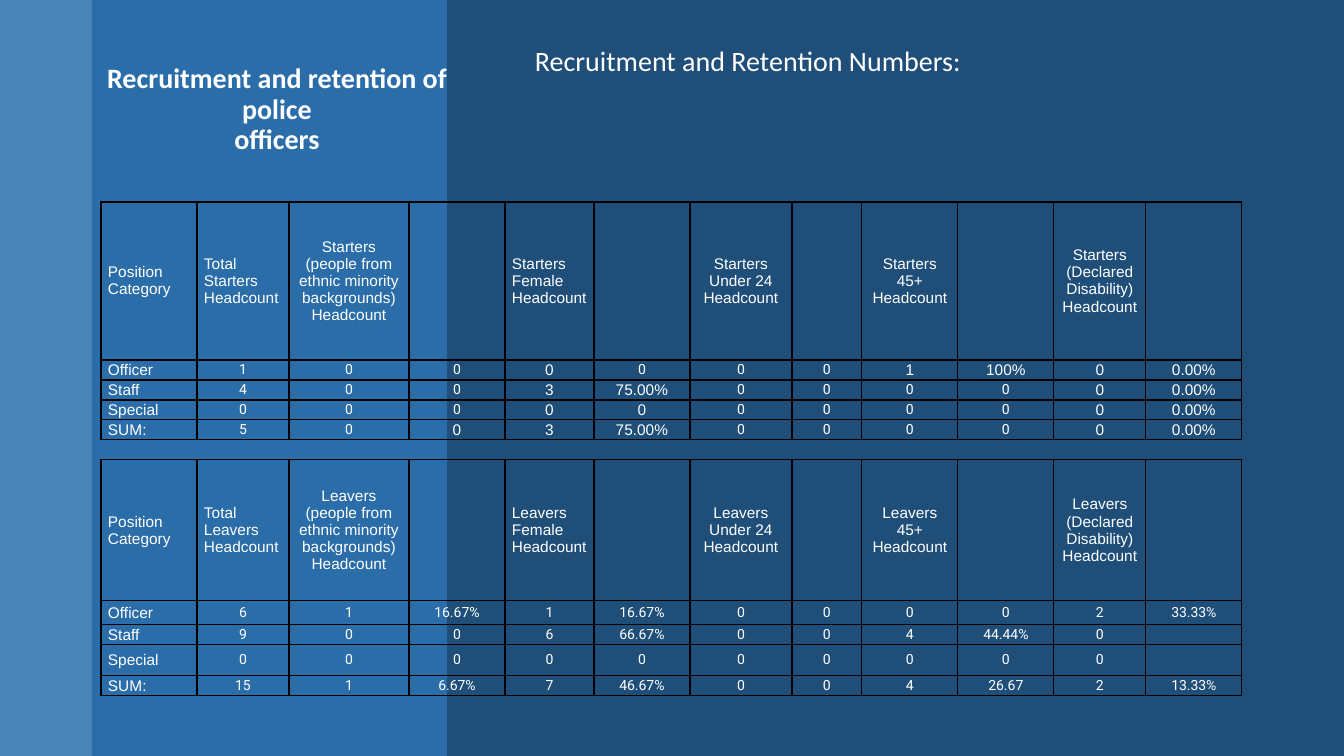
from lxml.etree import SubElement
from pptx import Presentation
from pptx.dml.color import RGBColor
from pptx.enum.shapes import MSO_SHAPE as SHAPE
from pptx.enum.text import MSO_ANCHOR as ANCHOR, PP_ALIGN as ALIGN
from pptx.oxml.ns import qn
from pptx.util import Emu, Pt

EMU_PER_PX = 914400 / 100.8
WHITE, BLACK = "FFFFFF", "000000"

COLUMNS = [96, 92, 120, 96, 89, 96, 102, 70, 96, 96, 92, 96]
HEADER_HEIGHTS = {"Starters": 158, "Leavers": 141}
SPACER_HEIGHT = 20
LEFT_HEADERS = (0, 1, 4)

# Each row: height, label and values, columns set in Arial
STARTERS = [
    (20, "Officer|1|0|0|0|0|0|0|1|100%|0|0.00%", (0, 4, 8, 9, 10, 11)),
    (20, "Staff|4|0|0|3|75.00%|0|0|0|0|0|0.00%", (0, 4, 5, 10, 11)),
    (20, "Special|0|0|0|0|0|0|0|0|0|0|0.00%", (0, 4, 5, 10, 11)),
    (20, "SUM:|5|0|0|3|75.00%|0|0|0|0|0|0.00%", (0, 3, 4, 5, 10, 11)),
]
LEAVERS = [
    (24, "Officer|6|1|16.67%|1|16.67%|0|0|0|0|2|33.33%", (0,)),
    (20, "Staff|9|0|0|6|66.67%|0|0|4|44.44%|0|", (0,)),
    (31, "Special|0|0|0|0|0|0|0|0|0|0|", (0,)),
    (20, "SUM:|15|1|6.67%|7|46.67%|0|0|4|26.67|2|13.33%", (0,)),
]


def px(n):
    return Emu(round(n * EMU_PER_PX))


def rgb(color):
    return RGBColor.from_string(color)


def set_font(p, name, size, bold=False):
    p.font.name, p.font.size, p.font.bold = name, Pt(size), bold
    p.font.color.rgb = rgb(WHITE)


def add_band(slide, x, y, w, h, color, opacity):
    sp = slide.shapes.add_shape(SHAPE.RECTANGLE, px(x), px(y), px(w), px(h))
    sp.shadow.inherit = False
    sp.line.fill.background()
    sp.fill.solid()
    sp.fill.fore_color.rgb = rgb(color)
    clr = sp.fill._xPr.find(".//" + qn("a:srgbClr"))
    SubElement(clr, qn("a:alpha"), val=str(opacity * 1000))


def add_heading(slide, x, y, w, h, text, align, anchor, bold):
    tf = slide.shapes.add_textbox(px(x), px(y), px(w), px(h)).text_frame
    tf.word_wrap = True
    tf.vertical_anchor = anchor
    p = tf.paragraphs[0]
    p.text = text
    p.alignment = align
    p.line_spacing = 0.9
    set_font(p, "Calibri", 20, bold)


def set_borders(cell, drawn="LRTB"):
    tcPr = cell._tc.get_or_add_tcPr()
    for side in "LRTB":
        ln = SubElement(tcPr, qn(f"a:ln{side}"), w="12700")
        if side in drawn:
            fill = SubElement(ln, qn("a:solidFill"))
            SubElement(fill, qn("a:srgbClr"), val=BLACK)
        else:
            SubElement(ln, qn("a:noFill"))


def fill_cell(cell, text, arial, align, borders="LRTB"):
    cell.margin_left = cell.margin_right = px(7)
    cell.margin_top = cell.margin_bottom = 0
    cell.vertical_anchor = ANCHOR.MIDDLE
    set_borders(cell, borders)
    cell.fill.background()
    p = cell.text_frame.paragraphs[0]
    p.alignment = align
    name, size = ("Arial", 11) if arial else ("Roboto", 10)
    if text:
        p.text = text
        set_font(p, name, size)
    else:
        SubElement(p._p, qn("a:endParaRPr"), sz=str(size * 100))


def header_texts(group):
    return ["Position Category", f"Total {group} Headcount",
            f"{group} (people from ethnic minority backgrounds) Headcount", "",
            f"{group} Female Headcount", "",
            f"{group} Under 24 Headcount", "",
            f"{group} 45+ Headcount", "",
            f"{group} (Declared Disability) Headcount", ""]


def fill_group(table, top, group, rows):
    """Write a header row and its data rows, starting at row index top."""
    table.rows[top].height = px(HEADER_HEIGHTS[group])
    for c, text in enumerate(header_texts(group)):
        align = ALIGN.LEFT if c in LEFT_HEADERS else ALIGN.CENTER
        fill_cell(table.cell(top, c), text, True, align)
    for r, (height, values, arial_columns) in enumerate(rows, top + 1):
        table.rows[r].height = px(height)
        for c, text in enumerate(values.split("|")):
            align = ALIGN.CENTER if c else ALIGN.LEFT
            fill_cell(table.cell(r, c), text, c in arial_columns, align)


def add_headcount_table(slide, x, y):
    spacer = len(STARTERS) + 1
    n_rows = spacer + len(LEAVERS) + 2
    height = (sum(HEADER_HEIGHTS.values()) + SPACER_HEIGHT
              + sum(row[0] for row in STARTERS + LEAVERS))
    table = slide.shapes.add_table(n_rows, len(COLUMNS), px(x), px(y),
                                   px(sum(COLUMNS)), px(height)).table
    table.first_row = table.horz_banding = False
    for column, width in zip(table.columns, COLUMNS):
        column.width = px(width)
    fill_group(table, 0, "Starters", STARTERS)
    table.rows[spacer].height = px(SPACER_HEIGHT)
    for cell in table.rows[spacer].cells:
        fill_cell(cell, "", False, ALIGN.LEFT, borders="TB")
    table.cell(spacer, 0).merge(table.cell(spacer, len(COLUMNS) - 1))
    fill_group(table, spacer + 1, "Leavers", LEAVERS)


def main():
    prs = Presentation()
    prs.slide_width, prs.slide_height = px(1344), px(756)
    slide = prs.slides.add_slide(prs.slide_layouts[6])
    slide.background.fill.solid()
    slide.background.fill.fore_color.rgb = rgb("1F4E79")

    add_band(slide, 0, 0, 92, 756, "5B9BD5", 70)
    add_band(slide, 92, 0, 355, 756, "2E75B6", 80)
    add_heading(slide, 95, 0, 364, 220,
                "Recruitment and retention of police\vofficers",
                ALIGN.CENTER, ANCHOR.MIDDLE, True)
    add_heading(slide, 525, 42, 766, 632, "Recruitment and Retention Numbers:",
                ALIGN.LEFT, ANCHOR.TOP, False)
    add_headcount_table(slide, 101, 202)
    prs.save("out.pptx")


if __name__ == "__main__":
    main()
